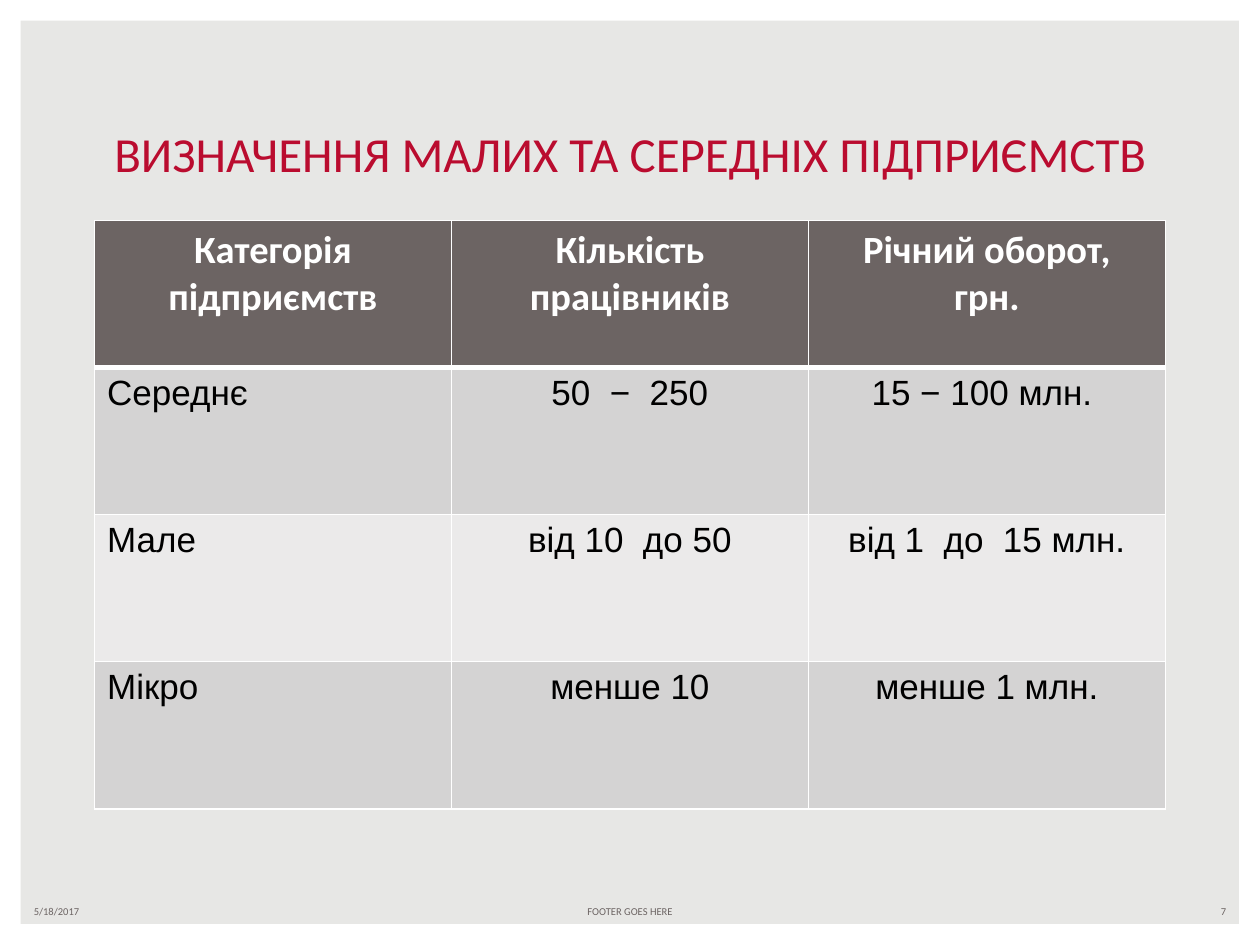
import dataclasses

import pptx
import pptx.dml.color
import pptx.enum.shapes
import pptx.enum.text
import pptx.oxml.ns
import pptx.util
from lxml import etree

Inches = pptx.util.Inches
ALIGN = pptx.enum.text.PP_ALIGN
ANCHOR = pptx.enum.text.MSO_ANCHOR


@dataclasses.dataclass(frozen=True)
class Theme:
    background: str = "E7E7E5"
    white: str = "FFFFFF"
    black: str = "000000"
    accent: str = "BA0C2F"
    brown: str = "6C6463"
    bands: tuple = ("D4D3D3", "EBEAEA")
    heading_font: str = "Calibri"
    body_font: str = "Arial"
    title_size: int = 28
    header_size: int = 22
    body_size: int = 20
    footer_size: int = 6
    rule: int = 1
    header_rule: int = 3


THEME = Theme()

HEADERS = ["Категорія підприємств", "Кількість працівників", "Річний оборот,\nгрн."]
ROWS = [
    ["Середнє", "50  −  250", "15 − 100 млн. "],
    ["Мале", "від 10  до 50", "від 1  до  15 млн."],
    ["Мікро", "менше 10", "менше 1 млн."],
]


def rgb(value):
    return pptx.dml.color.RGBColor.from_string(value)


def write(tf, text, size, color, font=THEME.heading_font, bold=False, align=ALIGN.LEFT):
    tf.word_wrap = True
    for i, line in enumerate(text.split("\n")):
        p = tf.paragraphs[0] if i == 0 else tf.add_paragraph()
        p.alignment = align
        r = p.add_run()
        r.text = line
        r.font.name = font
        r.font.size = pptx.util.Pt(size)
        r.font.bold = bold
        r.font.color.rgb = rgb(color)


def set_borders(cell, color, **widths):
    tcPr = cell._tc.get_or_add_tcPr()
    qn = pptx.oxml.ns.qn
    for side in "LRTB":
        width = pptx.util.Pt(widths.get(side, THEME.rule))
        ln = etree.SubElement(tcPr, qn(f"a:ln{side}"), w=str(int(width)))
        fill = etree.SubElement(ln, qn("a:solidFill"))
        etree.SubElement(fill, qn("a:srgbClr"), val=color)


def add_background(s, left, top, width, height):
    s.background.fill.solid()
    s.background.fill.fore_color.rgb = rgb(THEME.background)
    frame = s.shapes.add_shape(pptx.enum.shapes.MSO_SHAPE.FRAME, left, top, width, height)
    frame.adjustments[0] = 0.022
    frame.shadow.inherit = False
    frame.fill.solid()
    frame.fill.fore_color.rgb = rgb(THEME.white)
    frame.line.fill.background()


def add_title(s, text, left, top, width, height):
    title = s.shapes.title
    title.left, title.top, title.width, title.height = left, top, width, height
    tf = title.text_frame
    tf.auto_size = pptx.enum.text.MSO_AUTO_SIZE.NONE
    tf.vertical_anchor = ANCHOR.BOTTOM
    write(tf, text, THEME.title_size, THEME.accent, align=ALIGN.CENTER)


def add_category_table(s, left, top, width, height):
    rows = [HEADERS] + ROWS
    table = s.shapes.add_table(len(rows), len(HEADERS), left, top, width, height).table
    for column in table.columns:
        column.width = int(width / len(HEADERS))
    for i, row in enumerate(rows):
        table.rows[i].height = int(height / len(rows))
        for j, text in enumerate(row):
            cell = table.cell(i, j)
            tf = cell.text_frame
            if i == 0:
                fill, edges = THEME.brown, {"B": THEME.header_rule}
                write(tf, text, THEME.header_size, THEME.white, bold=True, align=ALIGN.CENTER)
            else:
                fill = THEME.bands[(i - 1) % 2]
                edges = {"T": THEME.header_rule} if i == 1 else {}
                align = ALIGN.LEFT if j == 0 else ALIGN.CENTER
                write(tf, text, THEME.body_size, THEME.black, font=THEME.body_font, align=align)
            set_borders(cell, THEME.white, **edges)
            cell.fill.solid()
            cell.fill.fore_color.rgb = rgb(fill)


def add_footer(s, left, top, width, height):
    side, middle = Inches(2.33), Inches(3.17)
    parts = [
        ("5/18/2017", left, side, ALIGN.LEFT),
        ("FOOTER GOES HERE", left + (width - middle) // 2, middle, ALIGN.CENTER),
        ("7", left + width - side, side, ALIGN.RIGHT),
    ]
    for text, x, w, align in parts:
        tf = s.shapes.add_textbox(x, top, w, height).text_frame
        tf.vertical_anchor = ANCHOR.MIDDLE
        write(tf, text, THEME.footer_size, THEME.brown, align=align)


def main():
    prs = pptx.Presentation()
    prs.slide_width, prs.slide_height = Inches(10), Inches(7.5)
    s = prs.slides.add_slide(prs.slide_layouts[5])
    margin, content = Inches(0.75), Inches(8.5)
    add_background(s, 0, 0, prs.slide_width, prs.slide_height)
    add_title(s, "ВИЗНАЧЕННЯ МАЛИХ ТА СЕРЕДНІХ ПІДПРИЄМСТВ",
              margin, Inches(0.46), content, Inches(1.04))
    add_category_table(s, margin, Inches(1.75), content, Inches(4.67))
    add_footer(s, Inches(0.17), Inches(7.13), Inches(9.66), Inches(0.2))
    prs.save("out.pptx")


if __name__ == "__main__":
    main()
